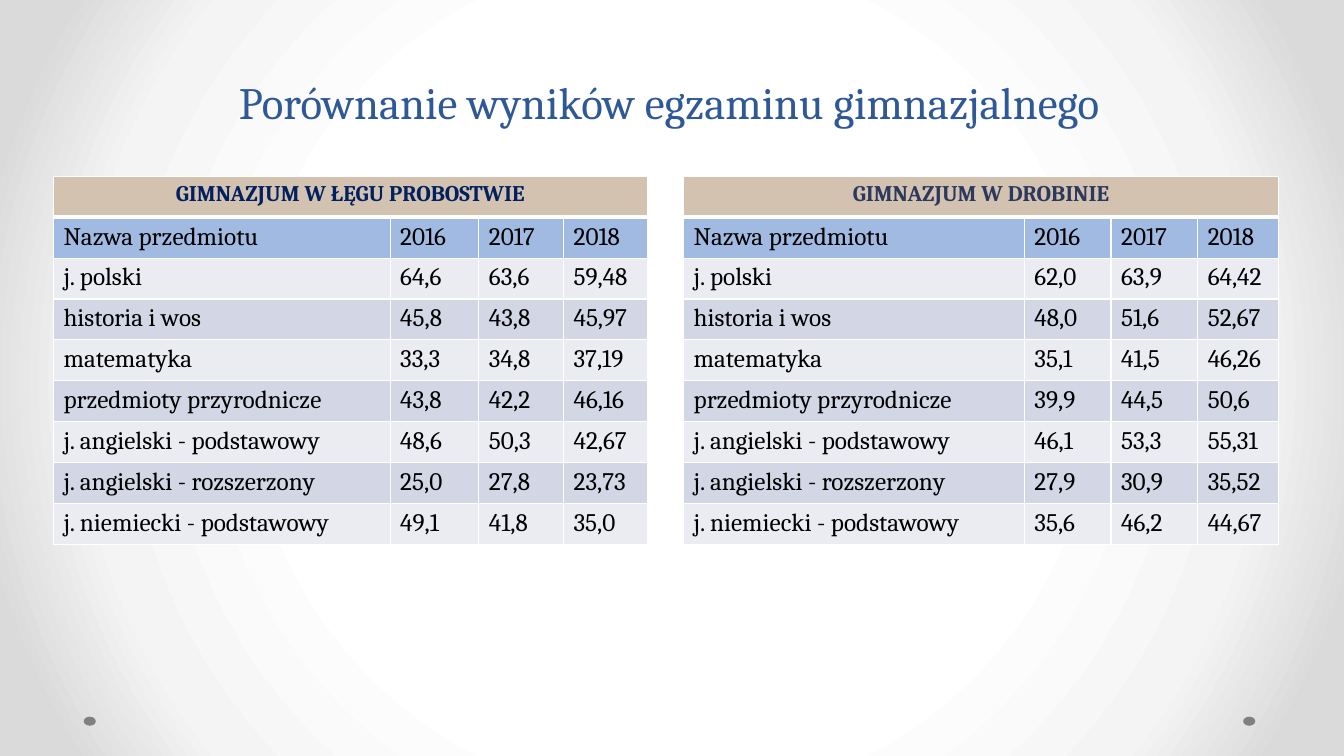
from pptx import Presentation
from pptx.dml.color import RGBColor as Rgb
from pptx.enum.shapes import MSO_SHAPE as Kind
from pptx.enum.text import MSO_ANCHOR as Anchor, PP_ALIGN as Align
from pptx.oxml import parse_xml
from pptx.oxml.ns import nsdecls, qn
from pptx.util import Inches, Pt

HUES = {
    "title": "2F5897", "dot": "808080", "white": "FFFFFF", "black": "000000",
    "sand": "D4C2B0", "blue": "A0BAE1", "pale": "EAECF2", "grey": "D2D6E5",
    "navy": "002060", "slate": "2C395E", "mist": "F4F4F4", "edge": "DADADA",
}
YEARS = ("2016", "2017", "2018")
TOPICS = (
    "j. polski", "historia i wos", "matematyka", "przedmioty przyrodnicze",
    "j. angielski - podstawowy", "j. angielski - rozszerzony",
    "j. niemiecki - podstawowy",
)
DROBIN = (
    ("62,0", "63,9", "64,42"), ("48,0", "51,6", "52,67"),
    ("35,1", "41,5", "46,26"), ("39,9", "44,5", "50,6"),
    ("46,1", "53,3", "55,31"), ("27,9", "30,9", "35,52"),
    ("35,6", "46,2", "44,67"),
)
LEG = (
    ("64,6", "63,6", "59,48"), ("45,8", "43,8", "45,97"),
    ("33,3", "34,8", "37,19"), ("43,8", "42,2", "46,16"),
    ("48,6", "50,3", "42,67"), ("25,0", "27,8", "23,73"),
    ("49,1", "41,8", "35,0"),
)


class Page:
    """Holds the text style and the slide being built."""

    def __init__(self, deck, face):
        self.face = face
        self.slide = deck.slides.add_slide(deck.slide_layouts[5])

    def back(self, stops):
        self.slide.background.fill.solid()
        props = self.slide.element.find(".//" + qn("p:bgPr"))
        marks = "".join(
            f'<a:gs pos="{spot * 1000}"><a:srgbClr val="{HUES[hue]}"/></a:gs>'
            for spot, hue in stops)
        props.replace(props[0], parse_xml(
            f'<a:gradFill {nsdecls("a")} rotWithShape="1">'
            f'<a:gsLst>{marks}</a:gsLst><a:path path="circle">'
            '<a:fillToRect l="50000" t="50000" r="50000" b="50000"/>'
            '</a:path></a:gradFill>'))

    def style(self, par, size, hue, bold=False):
        font = par.font
        font.name, font.size, font.bold = self.face, Pt(size), bold
        font.color.rgb = Rgb.from_string(HUES[hue])

    def title(self, text, left, top, width, height):
        head = self.slide.shapes.title
        head.left, head.top = Inches(left), Inches(top)
        head.width, head.height = Inches(width), Inches(height)
        frame = head.text_frame
        frame.text = text
        frame.vertical_anchor = Anchor.BOTTOM
        par = frame.paragraphs[0]
        par.alignment = Align.CENTER
        par.line_spacing = Pt(58)
        self.style(par, 32, "title")

    def dot(self, left, top):
        oval = self.slide.shapes.add_shape(
            Kind.OVAL, Inches(left), Inches(top), Inches(0.12), Inches(0.09))
        oval.shadow.inherit = False
        oval.fill.solid()
        oval.fill.fore_color.rgb = Rgb.from_string(HUES["dot"])
        oval.line.fill.background()

    def cell(self, cell, text, fill, size=18, hue="black", bold=False,
             over=1, under=1):
        cell.text = text
        self.style(cell.text_frame.paragraphs[0], size, hue, bold)
        cell.fill.solid()
        cell.fill.fore_color.rgb = Rgb.from_string(HUES[fill])
        props = cell._tc.get_or_add_tcPr()
        sides = (("L", 1), ("R", 1), ("T", over), ("B", under))
        for spot, (side, width) in enumerate(sides):
            props.insert(spot, parse_xml(
                f'<a:ln{side} {nsdecls("a")} w="{Pt(width)}"><a:solidFill>'
                f'<a:srgbClr val="{HUES["white"]}"/></a:solidFill></a:ln{side}>'))

    def table(self, left, name, hue, widths, marks):
        rows = [("Nazwa przedmiotu", *YEARS)]
        rows += [(topic, *row) for topic, row in zip(TOPICS, marks)]
        grid = self.slide.shapes.add_table(
            len(rows) + 1, len(widths), Inches(left), Inches(1.75),
            Inches(sum(widths)), Inches(3.65)).table
        for col, width in zip(grid.columns, widths):
            col.width = Inches(width)
        for col in range(len(widths)):
            self.cell(grid.cell(0, col), "" if col else name, "sand",
                      16, hue, True, under=3)
        grid.cell(0, 0).merge(grid.cell(0, len(widths) - 1))
        grid.cell(0, 0).text_frame.paragraphs[0].alignment = Align.CENTER
        for row, texts in enumerate(rows, 1):
            fill = "blue" if row == 1 else ("pale", "grey")[row % 2]
            for col, text in enumerate(texts):
                self.cell(grid.cell(row, col), text, fill,
                          over=3 if row == 1 else 1)


def main():
    deck = Presentation()
    deck.slide_width, deck.slide_height = Inches(13.33), Inches(7.5)
    page = Page(deck, "Cambria")
    page.back(((50, "white"), (76, "mist"), (92, "edge")))
    for left in (12.33, 0.83):
        page.dot(left, 7.11)
    page.title("Porównanie wyników egzaminu gimnazjalnego",
               0.64, 0.12, 12, 1.2)
    page.table(6.78, "GIMNAZJUM W DROBINIE", "slate",
               (3.38, 0.86, 0.86, 0.8), DROBIN)
    page.table(0.53, "GIMNAZJUM W ŁĘGU PROBOSTWIE", "navy",
               (3.34, 0.88, 0.84, 0.83), LEG)
    deck.save("out.pptx")


if __name__ == "__main__":
    main()
